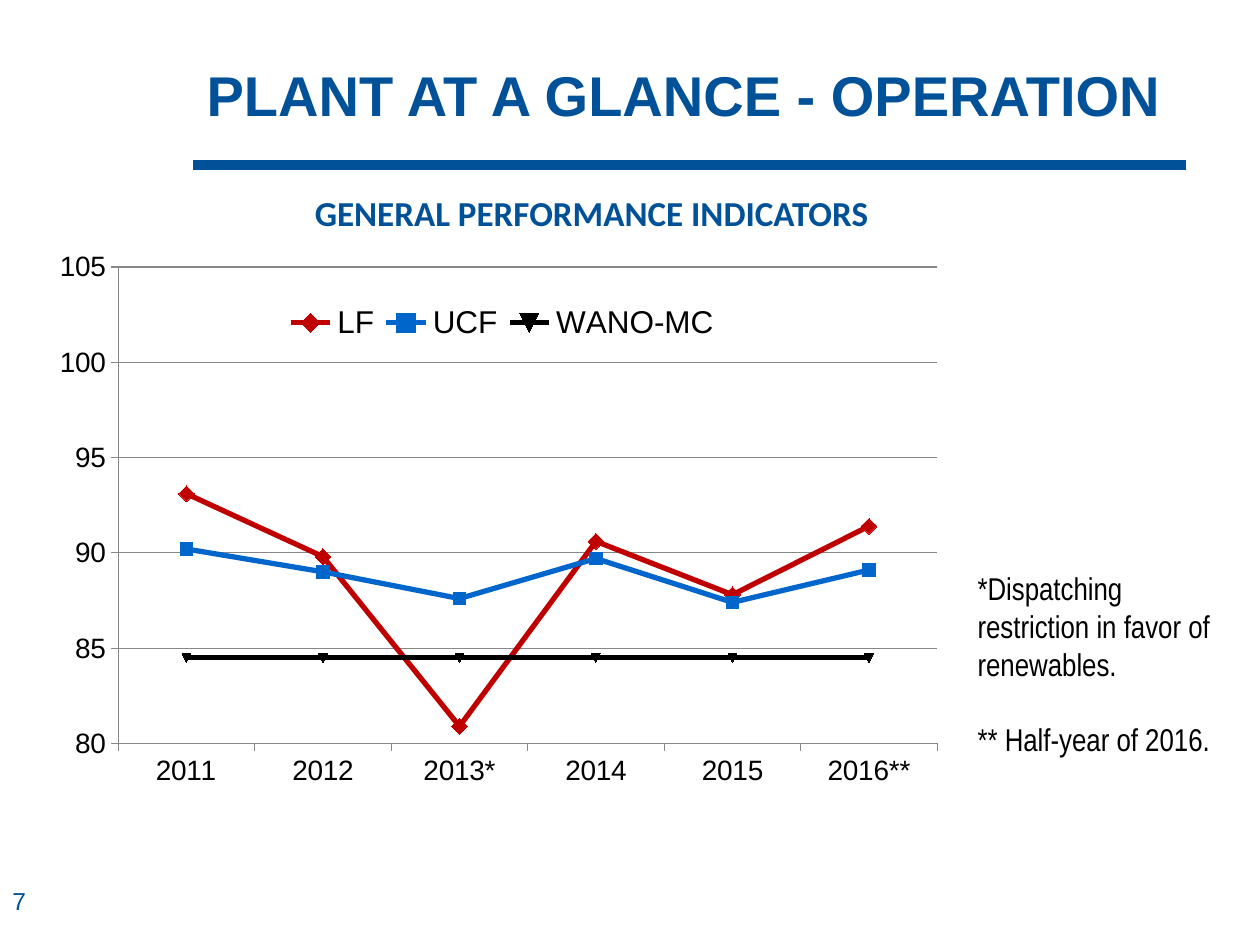
import pptx
import pptx.chart.data
import pptx.dml.color
import pptx.enum.chart
import pptx.enum.shapes
import pptx.enum.text
import pptx.oxml
import pptx.oxml.ns
import pptx.util
from lxml import etree

RGBColor = pptx.dml.color.RGBColor
Inches, Pt = pptx.util.Inches, pptx.util.Pt
Marker = pptx.enum.chart.XL_MARKER_STYLE

NAVY = RGBColor(0x00, 0x51, 0x97)
BLACK = RGBColor(0x00, 0x00, 0x00)
RED = RGBColor(0xC0, 0x00, 0x00)
BLUE = RGBColor(0x00, 0x66, 0xCC)
GREY = RGBColor(0x87, 0x87, 0x87)

YEARS = ["2011", "2012", "2013*", "2014", "2015", "2016**"]
# name, values, colour, marker style (None is automatic), marker size
INDICATORS = [
    ("LF", [93.1, 89.8, 80.9, 90.6, 87.8, 91.4], RED, Marker.DIAMOND, 9),
    ("UCF", [90.2, 89, 87.6, 89.7, 87.4, 89.1], BLUE, Marker.SQUARE, 7),
    ("WANO-MC", [84.5] * len(YEARS), BLACK, None, 5),
]

# Boxes in inches: left, top, width, height
TITLE_BOX = (1.54, 0.36, 8, 0.78)
RULE_BOX = (1.53, 1.31, 7.88, 0)
HEADING_BOX = (2.4, 1.47, 4.63, 0.44)
CHART_BOX = (0.33, 1.92, 7.24, 4.42)
NOTES_BOX = (7.66, 4.47, 2.09, 1.62)
NUMBER_BOX = (0, 6.98, 0.47, 0.39)

# Shares of the chart area: left, top, width, height
PLOT_SHARE = (0.084, 0.045, 0.898, 0.856)
LEGEND_SHARE = (0.26, 0.11, 0.49, 0.07)


def style_font(font, name, size, color, bold=False):
    font.name, font.size, font.bold = name, Pt(size), bold
    font.color.rgb = color


def add_title(page, box, text):
    title = page.shapes.title
    title.left, title.top, title.width, title.height = map(Inches, box)
    frame = title.text_frame
    frame.text = text
    frame.auto_size = pptx.enum.text.MSO_AUTO_SIZE.NONE
    frame.vertical_anchor = pptx.enum.text.MSO_ANCHOR.MIDDLE
    para = frame.paragraphs[0]
    para.alignment = pptx.enum.text.PP_ALIGN.LEFT
    style_font(para.font, "Arial", 32, NAVY, bold=True)


def add_rule(page, box):
    left, top, width, height = box
    rule = page.shapes.add_connector(
        pptx.enum.shapes.MSO_CONNECTOR.STRAIGHT,
        *map(Inches, (left, top, left + width, top + height)))
    rule.line.color.rgb = NAVY
    rule.line.width = Pt(6)
    etree.SubElement(rule._element.spPr, pptx.oxml.ns.qn("a:effectLst"))


def add_text(page, box, lines, name, size, color, bold=False, wrap=True, gap=0):
    """Add one paragraph per line, with gap points between paragraphs."""
    frame = page.shapes.add_textbox(*map(Inches, box)).text_frame
    frame.word_wrap = wrap
    for index, line in enumerate(lines):
        para = frame.add_paragraph() if index else frame.paragraphs[0]
        para.text = line
        if index:
            para.space_before = Pt(gap)
        style_font(para.font, name, size, color, bold)


def set_layout(element, shares, successors, inner=False):
    """Fix the place of a plot area or legend as shares of the chart."""
    for old in element.findall(pptx.oxml.ns.qn("c:layout")):
        element.remove(old)
    target = '<c:layoutTarget val="inner"/>' if inner else ""
    modes = "".join(f'<c:{side}Mode val="edge"/>' for side in "xy")
    sizes = "".join(f'<c:{side} val="{share}"/>'
                    for side, share in zip("xywh", shares))
    layout = pptx.oxml.parse_xml(
        f'<c:layout {pptx.oxml.ns.nsdecls("c")}><c:manualLayout>'
        f'{target}{modes}{sizes}</c:manualLayout></c:layout>')
    element.insert_element_before(layout, *successors)


def style_axes(chart):
    values = chart.value_axis
    values.minimum_scale, values.maximum_scale, values.major_unit = 80, 105, 5
    values.has_major_gridlines = True
    values.tick_labels.number_format = "General"
    values.tick_labels.number_format_is_linked = False
    for axis in (values, chart.category_axis):
        axis.major_tick_mark = pptx.enum.chart.XL_TICK_MARK.OUTSIDE
        style_font(axis.tick_labels.font, "Arial", 16, BLACK)
    for line in (values.format.line, chart.category_axis.format.line,
                 values.major_gridlines.format.line):
        line.color.rgb = GREY
        line.width = Pt(0.75)


def style_series(series, color, marker_style, marker_size):
    series.smooth = False
    series.format.line.color.rgb = color
    series.format.line.width = Pt(3)
    marker = series.marker
    if marker_style is not None:
        marker.style = marker_style
    marker.size = marker_size
    marker.format.fill.solid()
    marker.format.fill.fore_color.rgb = color
    marker.format.line.color.rgb = color


def add_indicator_chart(page, box):
    data = pptx.chart.data.CategoryChartData()
    data.categories = YEARS
    for name, values, *_ in INDICATORS:
        data.add_series(name, values)
    chart = page.shapes.add_chart(
        pptx.enum.chart.XL_CHART_TYPE.LINE_MARKERS,
        *map(Inches, box), data).chart
    chart.has_title = False
    style_font(chart.font, "Arial", 18, BLACK)
    style_axes(chart)

    plot = chart.plots[0]
    plot.vary_by_categories = False
    for series, (_, _, color, style, size) in zip(plot.series, INDICATORS):
        style_series(series, color, style, size)

    chart.has_legend = True
    legend = chart.legend
    legend.position = pptx.enum.chart.XL_LEGEND_POSITION.BOTTOM
    legend.include_in_layout = True
    style_font(legend.font, "Arial", 18, BLACK)
    set_layout(legend._element, LEGEND_SHARE,
               ("c:overlay", "c:spPr", "c:txPr"))
    set_layout(chart._chartSpace.chart.plotArea, PLOT_SHARE,
               ("c:lineChart",), inner=True)


def main():
    deck = pptx.Presentation()
    deck.slide_width, deck.slide_height = Inches(10), Inches(7.5)
    page = deck.slides.add_slide(deck.slide_layouts.get_by_name("Title Only"))
    add_rule(page, RULE_BOX)
    add_text(page, NUMBER_BOX, ["7"], "Arial", 14, NAVY)
    add_text(page, HEADING_BOX, ["GENERAL PERFORMANCE INDICATORS"],
             "Calibri", 20, NAVY, bold=True, wrap=False)
    add_text(page, NOTES_BOX,
             ["*Dispatching restriction in favor of renewables.",
              "** Half-year of 2016."],
             "Arial Narrow", 18, BLACK, gap=21.5)
    add_indicator_chart(page, CHART_BOX)
    add_title(page, TITLE_BOX, "PLANT AT A GLANCE - OPERATION")
    deck.save("out.pptx")


if __name__ == "__main__":
    main()
